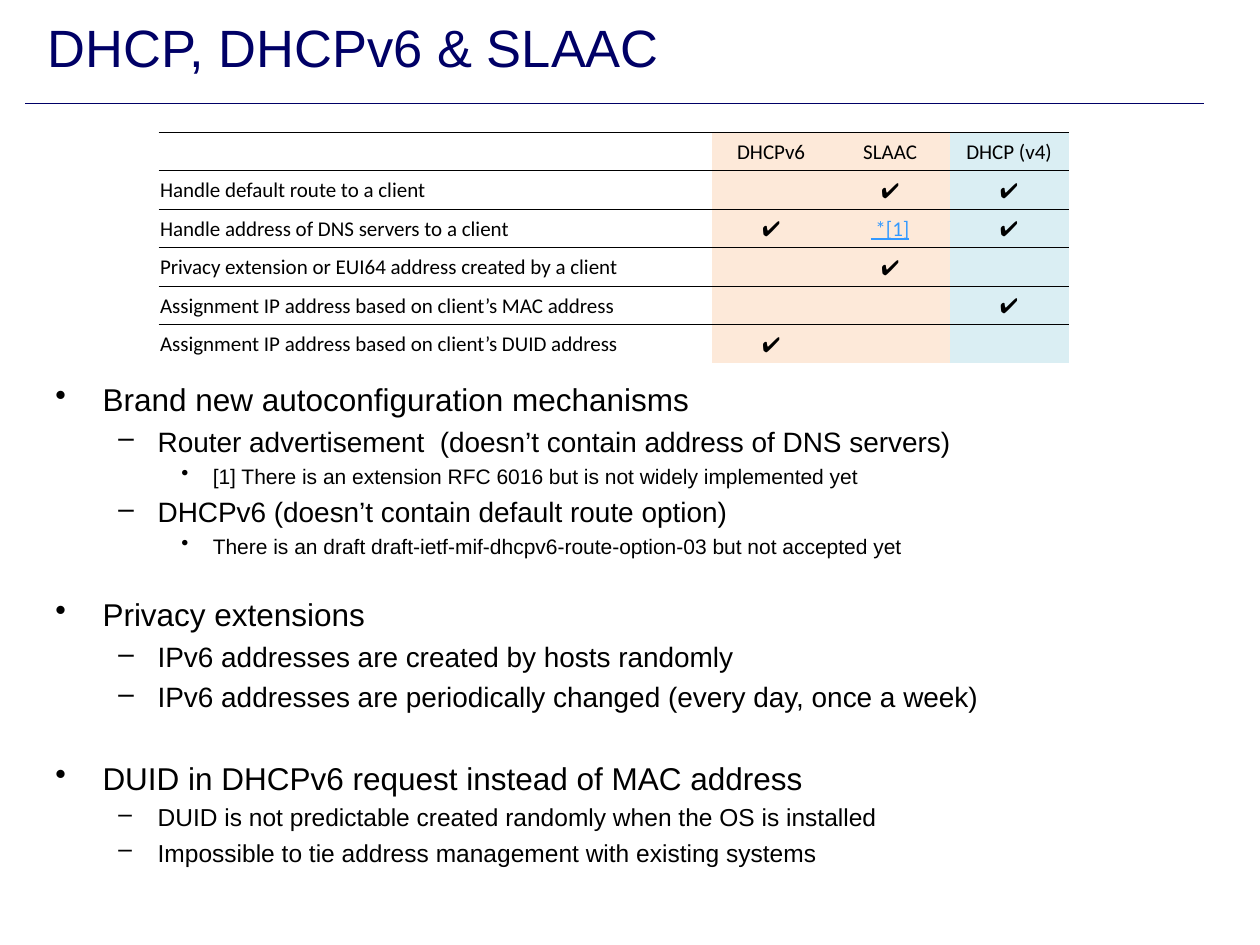
from lxml.etree import SubElement
from pptx import Presentation
from pptx.dml.color import RGBColor
from pptx.enum.shapes import MSO_CONNECTOR as Connector
from pptx.enum.text import MSO_ANCHOR as Anchor, PP_ALIGN as Align
from pptx.oxml.ns import qn
from pptx.util import Pt

NAVY, BLACK, LINK = "000066", "000000", "3399FF"
ORANGE, BLUE = "FDE9D9", "DAEEF3"
CHECK = "✔"

COLUMN_WIDTHS = [316, 68, 68, 68]
COLUMN_FILLS = [None, ORANGE, ORANGE, BLUE]
ROW_HEIGHT = 22
ROWS = [
    ["", "DHCPv6", "SLAAC", "DHCP (v4)"],
    ["Handle default route to a client", "", CHECK, CHECK],
    ["Handle address of DNS servers to a client", CHECK, " *[1]", CHECK],
    ["Privacy extension or EUI64 address created by a client", "", CHECK, ""],
    ["Assignment IP address based on client’s MAC address", "", "", CHECK],
    ["Assignment IP address based on client’s DUID address", CHECK, "", ""],
]

# Per level: bullet, left margin, hanging indent
LEVELS = [("•", 27, 27), ("–", 58.5, 22.5), ("•", 90, 18)]
# Level, size, extra gap above, text
BULLETS = [
    (0, 18, 0, "Brand new autoconfiguration mechanisms"),
    (1, 16, 0, "Router advertisement  (doesn’t contain address of DNS servers)"),
    (2, 12, 0, "[1] There is an extension RFC 6016 but is not widely implemented yet"),
    (1, 16, 0, "DHCPv6 (doesn’t contain default route option)"),
    (2, 12, 0, "There is an draft draft-ietf-mif-dhcpv6-route-option-03 but not accepted yet"),
    (0, 18, 17, "Privacy extensions"),
    (1, 16, 0, "IPv6 addresses are created by hosts randomly"),
    (1, 16, 0, "IPv6 addresses are periodically changed (every day, once a week)"),
    (0, 18, 22, "DUID in DHCPv6 request instead of MAC address"),
    (1, 14, 0, "DUID is not predictable created randomly when the OS is installed"),
    (1, 14, 0, "Impossible to tie address management with existing systems"),
]


def rgb(color):
    return RGBColor.from_string(color)


def set_font(font, size, color=BLACK, name="Arial"):
    font.name, font.size = name, Pt(size)
    font.color.rgb = rgb(color)


def set_border(cell, side, width):
    """Draw one cell edge; a width of 0 leaves it out."""
    line = SubElement(cell._tc.get_or_add_tcPr(), qn(f"a:ln{side}"), w=str(Pt(width)))
    if width:
        fill = SubElement(line, qn("a:solidFill"))
        SubElement(fill, qn("a:srgbClr"), val=BLACK)
    else:
        SubElement(line, qn("a:noFill"))


class SlideBuilder:
    def __init__(self, slide):
        self.slide = slide

    def text_frame(self, left, top, width, height, anchor):
        box = self.slide.shapes.add_textbox(Pt(left), Pt(top), Pt(width), Pt(height))
        frame = box.text_frame
        frame.word_wrap = True
        frame.vertical_anchor = anchor
        return frame

    def title(self, text, left, top, width, height):
        paragraph = self.text_frame(left, top, width, height, Anchor.MIDDLE).paragraphs[0]
        paragraph.text = text
        set_font(paragraph.font, 30, NAVY)

    def rule(self, left, right, y):
        line = self.slide.shapes.add_connector(
            Connector.STRAIGHT, Pt(left), Pt(y), Pt(right), Pt(y))
        line.line.color.rgb = rgb(NAVY)
        line.line.width = Pt(0.75)
        SubElement(line._element.spPr, qn("a:effectLst"))

    def table(self, left, top):
        table = self.slide.shapes.add_table(
            len(ROWS), len(COLUMN_WIDTHS), Pt(left), Pt(top),
            Pt(sum(COLUMN_WIDTHS)), Pt(ROW_HEIGHT * len(ROWS))).table
        table.first_row = table.horz_banding = False
        for column, width in zip(table.columns, COLUMN_WIDTHS):
            column.width = Pt(width)
        for i, texts in enumerate(ROWS):
            table.rows[i].height = Pt(ROW_HEIGHT)
            for j, text in enumerate(texts):
                self.cell(table.cell(i, j), text, COLUMN_FILLS[j], i)

    def cell(self, cell, text, color, row):
        edges = {"L": 0, "R": 0, "T": 0.5 if row else 1,
                 "B": 0.5 if row < len(ROWS) - 1 else 0}
        for side, width in edges.items():
            set_border(cell, side, width)
        if color:
            cell.fill.solid()
            cell.fill.fore_color.rgb = rgb(color)
        else:
            cell.fill.background()
        cell.margin_left = cell.margin_right = cell.margin_top = Pt(0.75)
        cell.margin_bottom = 0
        cell.vertical_anchor = Anchor.MIDDLE
        paragraph = cell.text_frame.paragraphs[0]
        paragraph.text = text
        paragraph.alignment = Align.CENTER if color else Align.LEFT
        is_link = "[1]" in text
        set_font(paragraph.font, 12, LINK if is_link else BLACK,
                 "Arial" if text == CHECK else "Calibri")
        if is_link:
            paragraph.font.underline = True

    def bullets(self, left, top, width, height):
        frame = self.text_frame(left, top, width, height, Anchor.TOP)
        for i, (level, size, gap, text) in enumerate(BULLETS):
            paragraph = frame.add_paragraph() if i else frame.paragraphs[0]
            paragraph.text = text
            paragraph.level = level
            bullet, margin, hanging = LEVELS[level]
            properties = paragraph._p.get_or_add_pPr()
            properties.set("marL", str(Pt(margin)))
            properties.set("indent", str(-Pt(hanging)))
            SubElement(properties, qn("a:buChar"), char=bullet)
            paragraph.space_before = Pt(round(0.23 * size + gap, 1))
            set_font(paragraph.font, size)


def main():
    presentation = Presentation()
    presentation.slide_width, presentation.slide_height = Pt(720), Pt(540)
    builder = SlideBuilder(presentation.slides.add_slide(presentation.slide_layouts[6]))

    # Heading
    builder.rule(14.4, 688.3, 59)
    builder.title("DHCP, DHCPv6 & SLAAC", 20.2, 0, 528.5, 53.3)

    # Feature comparison
    builder.table(90.7, 75.6)

    # Explanations
    builder.bullets(24.5, 213.8, 658, 303)

    presentation.save("out.pptx")


if __name__ == "__main__":
    main()
